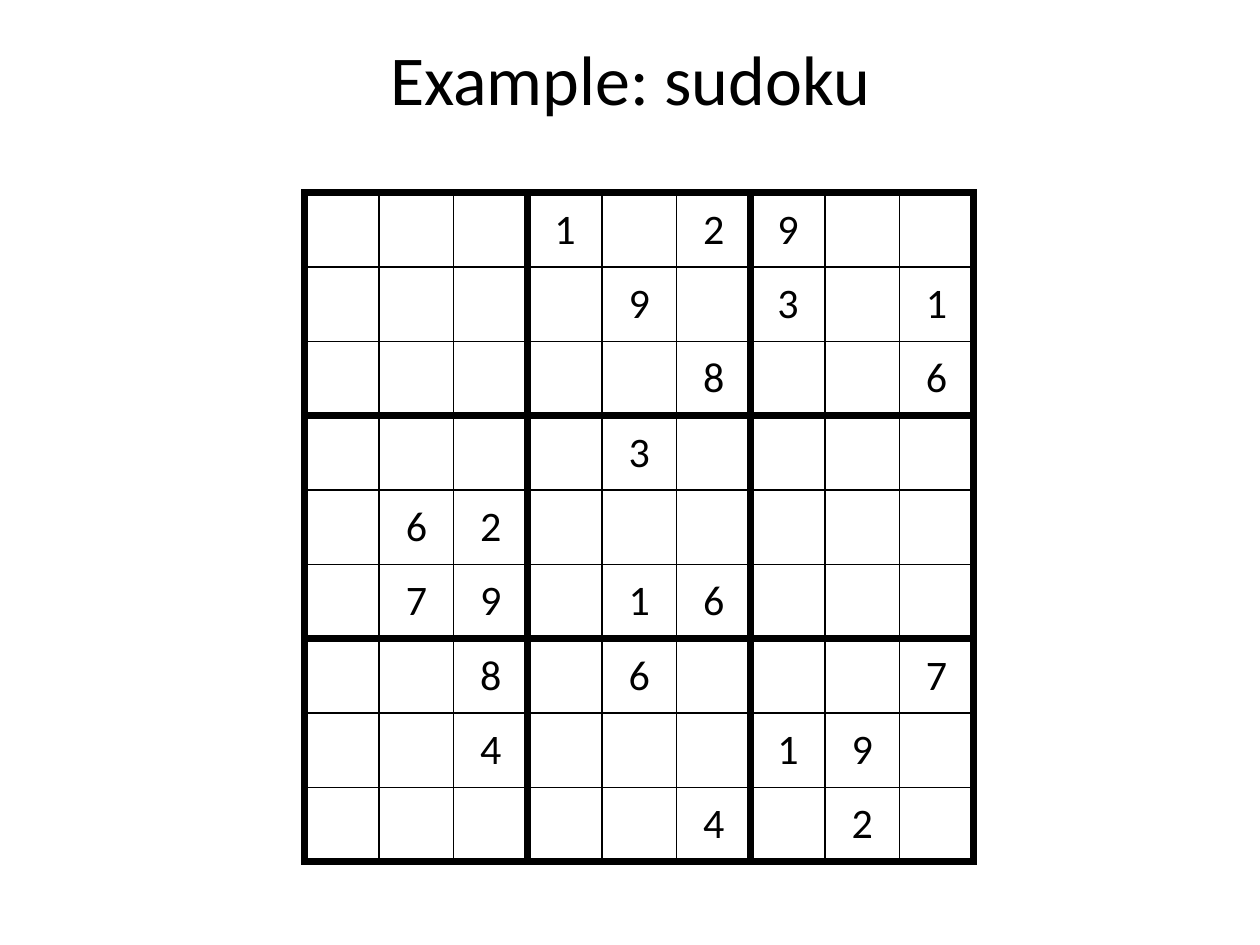
from dataclasses import dataclass

from lxml import etree
from pptx import Presentation
from pptx import util as u
from pptx.dml.color import RGBColor
from pptx.enum import text
from pptx.oxml.ns import qn

FONT = "Calibri"
BLACK = "000000"
WHITE = "FFFFFF"
THIN, THICK = 1, 4.5
BLOCK = 3
CELL_SIZE = 0.59

# One string per row of the puzzle; a dot is an empty cell.
PUZZLE = [
    "...1.29..",
    "....9.3.1",
    ".....8..6",
    "....3....",
    ".62......",
    ".79.16...",
    "..8.6...7",
    "..4...19.",
    ".....4.2.",
]


@dataclass
class Area:
    left: float
    top: float
    width: float
    height: float

    def inches(self) -> tuple:
        return tuple(u.Inches(n) for n in (self.left, self.top, self.width, self.height))


def colour(value: str) -> RGBColor:
    return RGBColor.from_string(value)


def write(frame, words: str, size: float) -> None:
    """Put one centred run into a text frame."""
    frame.vertical_anchor = text.MSO_ANCHOR.MIDDLE
    para = frame.paragraphs[0]
    para.alignment = text.PP_ALIGN.CENTER
    span = para.add_run()
    span.text = words
    span.font.size = u.Pt(size)
    span.font.name = FONT
    span.font.color.rgb = colour(BLACK)


def add_border(cell, side: str, points: float) -> None:
    line = etree.SubElement(cell._tc.get_or_add_tcPr(), qn(f"a:ln{side}"),
                            w=str(u.Pt(points)), cap="flat", cmpd="sng", algn="ctr")
    fill = etree.SubElement(line, qn("a:solidFill"))
    etree.SubElement(fill, qn("a:srgbClr"), val=BLACK)
    etree.SubElement(line, qn("a:prstDash"), val="solid")


def weight(edge: int) -> float:
    """Grid lines around each block are thick."""
    return THICK if edge % BLOCK == 0 else THIN


def draw_title(page, area: Area, words: str) -> None:
    title = page.shapes.title
    title.left, title.top, title.width, title.height = area.inches()
    write(title.text_frame, words, 40)


def draw_puzzle(page, area: Area, rows: list[str]) -> None:
    table = page.shapes.add_table(len(rows), len(rows[0]), *area.inches()).table
    table.first_row = table.horz_banding = False
    for track in table.columns:
        track.width = u.Inches(CELL_SIZE)
    for track in table.rows:
        track.height = u.Inches(CELL_SIZE)
    for row, digits in enumerate(rows):
        for column, digit in enumerate(digits):
            cell = table.cell(row, column)
            edges = {"L": column, "R": column + 1, "T": row, "B": row + 1}
            for side, edge in edges.items():
                add_border(cell, side, weight(edge))
            cell.fill.solid()
            cell.fill.fore_color.rgb = colour(WHITE)
            if digit != ".":
                cell.vertical_anchor = text.MSO_ANCHOR.MIDDLE
                write(cell.text_frame, digit, 24)


def main() -> None:
    deck = Presentation()
    deck.slide_width, deck.slide_height = u.Inches(10), u.Inches(7.5)
    page = deck.slides.add_slide(deck.slide_layouts[5])
    side = CELL_SIZE * len(PUZZLE)
    draw_title(page, Area(0.5, 0.26, 9, 0.71), "Example: sudoku")
    draw_puzzle(page, Area(2.42, 1.53, side, side), PUZZLE)
    deck.save("out.pptx")


if __name__ == "__main__":
    main()
